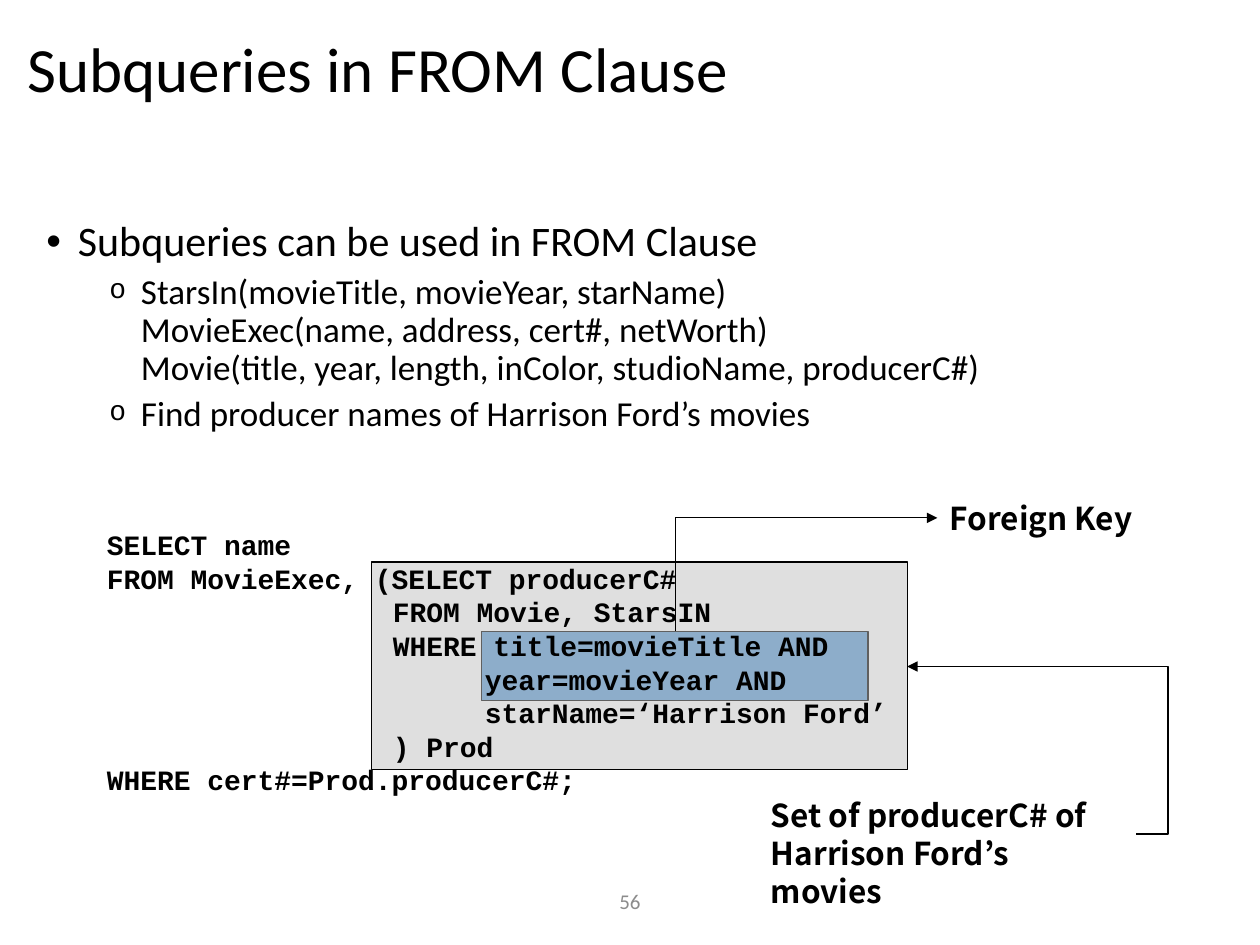
from lxml import etree
from pptx import Presentation
from pptx.dml.color import RGBColor
from pptx.enum.shapes import MSO_CONNECTOR, MSO_SHAPE
from pptx.enum.text import MSO_ANCHOR, PP_ALIGN
from pptx.oxml.ns import qn
from pptx.util import Inches, Pt

BLACK = RGBColor(0, 0, 0)
GRAY = RGBColor(0x8C, 0x8C, 0x8C)
SILVER = RGBColor(0xC0, 0xC0, 0xC0)
BLUE = RGBColor(0x5B, 0x9B, 0xD5)
RECTANGLE = MSO_SHAPE.RECTANGLE
ELBOW = MSO_CONNECTOR.ELBOW
TOP, MIDDLE = MSO_ANCHOR.TOP, MSO_ANCHOR.MIDDLE
CENTER = PP_ALIGN.CENTER
SANS, MONO, LABEL = "Calibri", "Courier New", "Noto Sans CJK KR"

# Left indents of the code lines, in inches
CLAUSE, CONDITION = 2.27, 3
QUERY = [
    ("SELECT name", 0),
    ("FROM MovieExec, (SELECT producerC#", 0),
    ("FROM Movie, StarsIN", CLAUSE),
    ("WHERE title=movieTitle AND", CLAUSE),
    ("year=movieYear AND", CONDITION),
    ("starName=‘Harrison Ford’", CONDITION),
    (") Prod", CLAUSE),
    ("WHERE cert#=Prod.producerC#;", 0),
]
SCHEMA = [
    "StarsIn(movieTitle, movieYear, starName)",
    "MovieExec(name, address, cert#, netWorth)",
    "Movie(title, year, length, inColor, studioName, producerC#)",
]


def add_text_frame(slide, left, top, width, height, anchor=TOP, wrap=True):
    box = slide.shapes.add_textbox(
        Inches(left), Inches(top), Inches(width), Inches(height))
    frame = box.text_frame
    frame.word_wrap = wrap
    frame.vertical_anchor = anchor
    return frame


def add_lines(paragraph, lines, font, size, bold=False, color=BLACK):
    for index, line in enumerate(lines):
        if index:
            paragraph.add_line_break()
        run = paragraph.add_run()
        run.text = line
        run.font.name = font
        run.font.size = Pt(size)
        run.font.bold = bold
        run.font.color.rgb = color


def set_indent(paragraph, left, first_line=0):
    properties = paragraph._p.get_or_add_pPr()
    properties.set("marL", str(Inches(left)))
    properties.set("indent", str(Inches(first_line)))
    return properties


def format_bullet(paragraph, character, font, left, space_before, percent=100):
    paragraph.line_spacing = 0.9
    paragraph.space_before = Pt(space_before)
    properties = set_indent(paragraph, left, -0.25)
    for tag, name, value in (("a:buSzPct", "val", str(percent * 1000)),
                             ("a:buFont", "typeface", font),
                             ("a:buChar", "char", character)):
        etree.SubElement(properties, qn(tag)).set(name, value)


def add_panel(slide, left, top, width, height, color, opacity=100):
    panel = slide.shapes.add_shape(
        RECTANGLE, Inches(left), Inches(top), Inches(width), Inches(height))
    panel.shadow.inherit = False
    panel.fill.solid()
    panel.fill.fore_color.rgb = color
    panel.line.color.rgb = BLACK
    panel.line.width = Pt(0.75)
    if opacity < 100:
        fill_color = panel._element.spPr.find(qn("a:solidFill"))[0]
        etree.SubElement(fill_color, qn("a:alpha")).set("val", str(opacity * 1000))


def add_elbow_arrow(slide, start, end):
    connector = slide.shapes.add_connector(
        ELBOW, *(Inches(value) for value in (*start, *end)))
    connector.line.color.rgb = BLACK
    connector.line.width = Pt(0.75)
    properties = connector._element.spPr
    line = properties.find(qn("a:ln"))
    etree.SubElement(line, qn("a:tailEnd")).set("type", "triangle")
    etree.SubElement(properties, qn("a:effectLst"))
    return properties


def add_outward_arrow(slide, start, end, bend_x):
    """Go sideways to bend_x, then vertically, then back to the end."""
    properties = add_elbow_arrow(slide, start, end)
    ratio = (bend_x - start[0]) / (end[0] - start[0])
    adjustments = properties.find(qn("a:prstGeom")).find(qn("a:avLst"))
    guide = etree.SubElement(adjustments, qn("a:gd"))
    guide.set("name", "adj1")
    guide.set("fmla", f"val {round(ratio * 100000)}")


def add_up_right_arrow(slide, start, end):
    """Go up, then right: a right-then-down elbow turned by 270 degrees."""
    center_x, center_y = (start[0] + end[0]) / 2, (start[1] + end[1]) / 2
    half_width, half_height = (start[1] - end[1]) / 2, (end[0] - start[0]) / 2
    properties = add_elbow_arrow(
        slide,
        (center_x - half_width, center_y - half_height),
        (center_x + half_width, center_y + half_height))
    properties.find(qn("a:xfrm")).set("rot", str(270 * 60000))
    properties.find(qn("a:prstGeom")).set("prst", "bentConnector2")


def add_title(slide):
    paragraph = add_text_frame(slide, 0.12, 0.08, 9.76, 0.99, MIDDLE).paragraphs[0]
    paragraph.line_spacing = 0.9
    add_lines(paragraph, ["Subqueries in FROM Clause"], SANS, 36)


def add_body(slide):
    frame = add_text_frame(slide, 0.27, 1.7, 9.21, 2.05)
    heading = frame.paragraphs[0]
    format_bullet(heading, "•", "Arial", 0.25, 10)
    add_lines(heading, ["Subqueries can be used in FROM Clause"], SANS, 24)
    for lines in (SCHEMA, ["Find producer names of Harrison Ford’s movies"]):
        paragraph = frame.add_paragraph()
        paragraph.level = 1
        format_bullet(paragraph, "o", MONO, 0.75, 5, 80)
        add_lines(paragraph, lines, SANS, 20)


def add_query(slide):
    frame = add_text_frame(slide, 0.75, 4.14, 7.64, 2.24)
    for index, (line, indent) in enumerate(QUERY):
        paragraph = frame.add_paragraph() if index else frame.paragraphs[0]
        set_indent(paragraph, indent)
        add_lines(paragraph, [line], MONO, 16, bold=True)


def add_label(slide, left, top, width, height, lines, wrap):
    frame = add_text_frame(slide, left, top, width, height, wrap=wrap)
    add_lines(frame.paragraphs[0], lines, LABEL, 18, bold=True)


def add_slide_number(slide):
    paragraph = add_text_frame(slide, 3.31, 6.95, 3.38, 0.4, MIDDLE).paragraphs[0]
    paragraph.alignment = CENTER
    add_lines(paragraph, ["56"], SANS, 12, color=GRAY)


def main():
    presentation = Presentation()
    presentation.slide_width, presentation.slide_height = Inches(10), Inches(7.5)
    slide = presentation.slides.add_slide(presentation.slide_layouts[6])

    # Highlights behind the query: join condition, then the whole subquery
    add_slide_number(slide)
    add_panel(slide, 3.82, 5.01, 3.07, 0.55, BLUE)
    add_panel(slide, 2.95, 4.46, 4.25, 1.65, SILVER, opacity=50)

    # Title, bullets and query
    add_title(slide)
    add_body(slide)
    add_query(slide)

    # Labels with their arrows
    add_label(slide, 6.02, 6.27, 2.99, 0.7,
              ["Set of producerC# of", "Harrison Ford’s movies"], wrap=True)
    add_outward_arrow(slide, (9.02, 6.62), (7.2, 5.29), bend_x=9.27)
    add_label(slide, 7.44, 3.91, 1.65, 0.4, ["Foreign Key"], wrap=False)
    add_up_right_arrow(slide, (5.36, 5.01), (7.44, 4.11))

    presentation.save("out.pptx")


if __name__ == "__main__":
    main()
